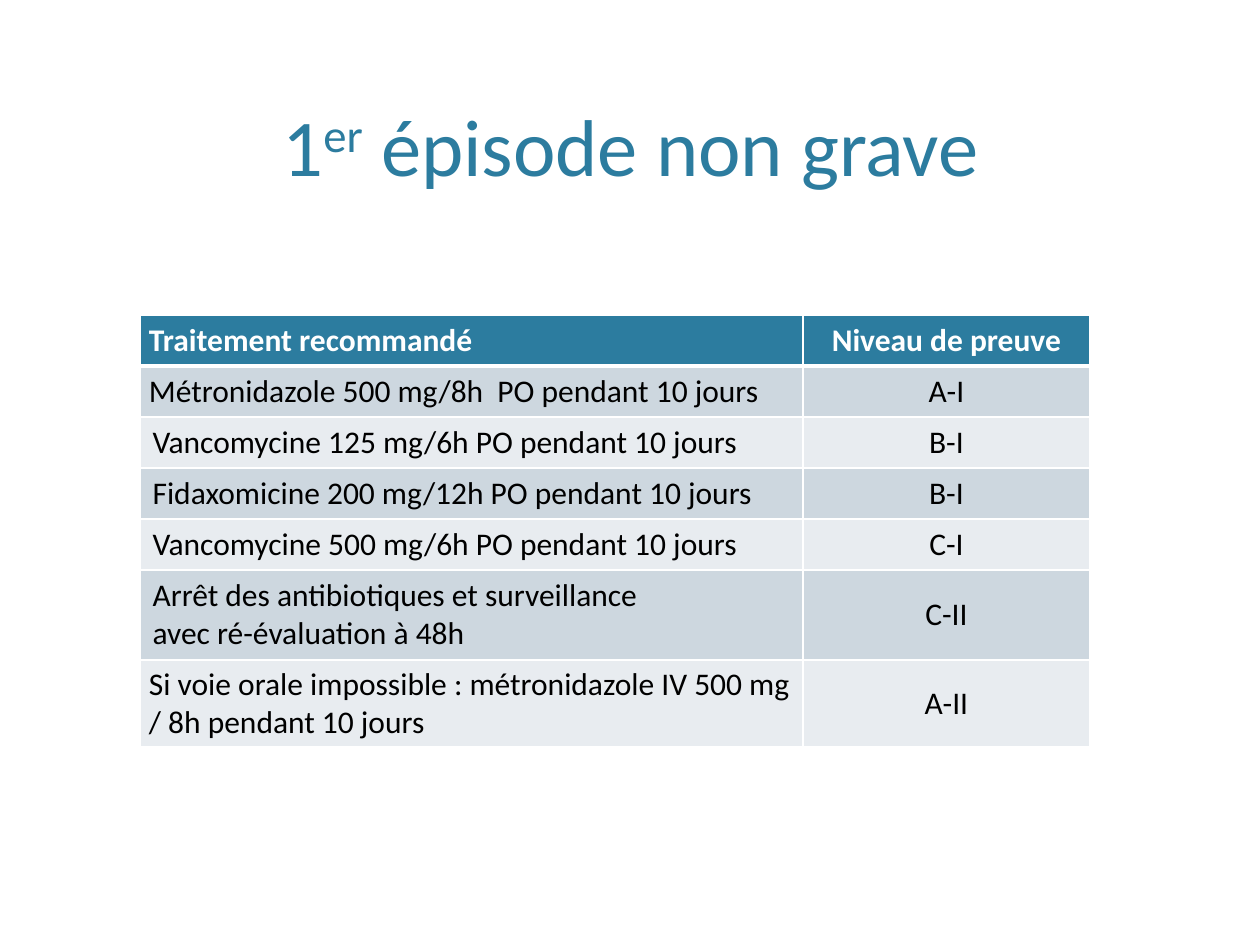
"""Slide: recommended treatments for a first, non-severe episode."""
from lxml.etree import SubElement
from pptx import Presentation
from pptx.dml.color import RGBColor
from pptx.enum.text import MSO_ANCHOR as Anchor, PP_ALIGN as Align
from pptx.oxml.ns import qn
from pptx.util import Pt

PX = 914400 / 126
TEAL = RGBColor(0x2C, 0x7C, 0x9F)
BLUE_GREY = RGBColor(0xCD, 0xD7, 0xDF)
PALE_GREY = RGBColor(0xE8, 0xEC, 0xF0)
WHITE = RGBColor(0xFF, 0xFF, 0xFF)
BLACK = RGBColor(0, 0, 0)
TREATMENTS = [
    ("Traitement recommandé", "Niveau de preuve"),
    ("Métronidazole 500 mg/8h  PO pendant 10 jours", "A-I"),
    ("Vancomycine 125 mg/6h PO pendant 10 jours", "B-I"),
    ("Fidaxomicine 200 mg/12h PO pendant 10 jours", "B-I"),
    ("Vancomycine 500 mg/6h PO pendant 10 jours", "C-I"),
    ("Arrêt des antibiotiques et surveillance\navec ré-évaluation à 48h", "C-II"),
    ("Si voie orale impossible : métronidazole IV 500 mg / 8h pendant 10 jours", "A-II"),
]
ROW_HEIGHTS = [51] * 5 + [90, 87]
COLUMN_WIDTHS = [663, 287]
NARROW_ROWS = (0, 1, 6)


def px(length):
    return round(length * PX)


def add_border(cell, side, points):
    line = SubElement(cell._tc.get_or_add_tcPr(), qn(f"a:ln{side}"), w=str(Pt(points)))
    fill = SubElement(line, qn("a:solidFill"))
    SubElement(fill, qn("a:srgbClr"), val=str(WHITE))


prs = Presentation()
prs.slide_width, prs.slide_height = px(1260), px(945)
slide = prs.slides.add_slide(prs.slide_layouts[6])

title = slide.shapes.add_textbox(px(76), px(15), px(1109), px(184)).text_frame
title.word_wrap = True
title.vertical_anchor = Anchor.BOTTOM
heading = title.paragraphs[0]
heading.alignment = Align.CENTER
heading.font.name = "Calibri"
heading.font.size = Pt(46)
heading.font.color.rgb = TEAL
for words, baseline in (("1", 0), ("er", 30000), (" épisode non grave", 0)):
    run = heading.add_run()
    run.text = words
    if baseline:
        run._r.get_or_add_rPr().set("baseline", str(baseline))

treatments = slide.shapes.add_table(
    len(TREATMENTS), 2, px(140), px(315), px(sum(COLUMN_WIDTHS)), px(sum(ROW_HEIGHTS))
).table
for column, width in zip(treatments.columns, COLUMN_WIDTHS):
    column.width = px(width)

for r, (entries, height) in enumerate(zip(TREATMENTS, ROW_HEIGHTS)):
    treatments.rows[r].height = px(height)
    for c, entry in enumerate(entries):
        cell = treatments.cell(r, c)
        cell.text = entry
        cell.vertical_anchor = Anchor.MIDDLE
        if r in NARROW_ROWS:
            cell.margin_left = cell.margin_right = px(9)
            cell.margin_top = cell.margin_bottom = px(5)
        for side in "LRTB":
            under_header = (r, side) in ((0, "B"), (1, "T"))
            add_border(cell, side, 3 if under_header else 1)
        cell.fill.solid()
        cell.fill.fore_color.rgb = TEAL if r == 0 else BLUE_GREY if r % 2 else PALE_GREY
        for paragraph in cell.text_frame.paragraphs:
            paragraph.alignment = Align.CENTER if c else Align.LEFT
            paragraph.font.name = "Calibri"
            paragraph.font.size = Pt(18)
            paragraph.font.bold = r == 0
            paragraph.font.color.rgb = BLACK if r else WHITE

prs.save("out.pptx")
